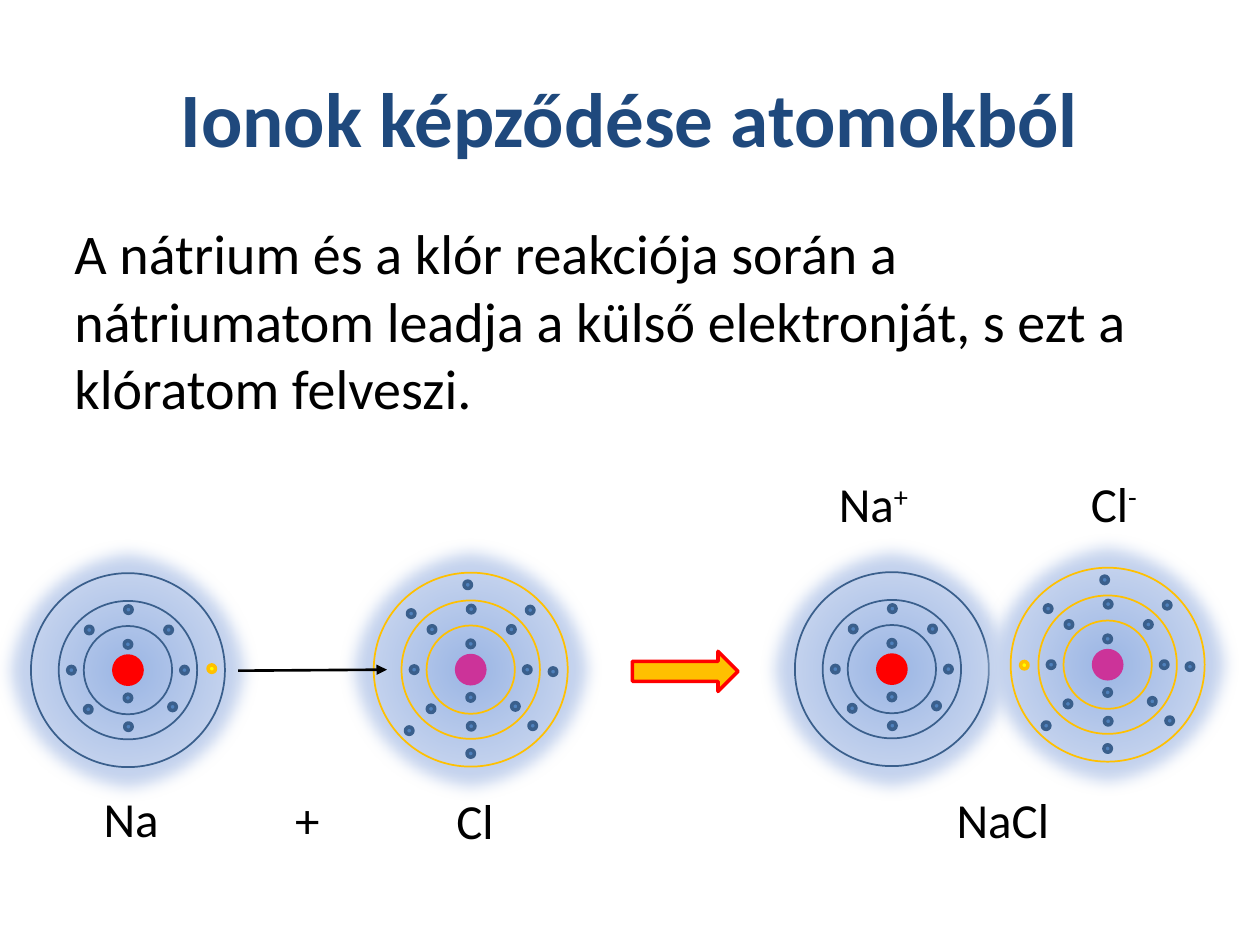
import pptx
import pptx.dml.color
import pptx.enum.shapes
import pptx.enum.text
import pptx.oxml
import pptx.oxml.ns
import pptx.util
from lxml import etree

Cm, Pt = pptx.util.Cm, pptx.util.Pt
SHAPE = pptx.enum.shapes.MSO_SHAPE
ALIGN = pptx.enum.text.PP_ALIGN
qn = pptx.oxml.ns.qn
NS = pptx.oxml.ns.nsdecls("a")

COLORS = {
    "title": "1F497D", "text": "000000", "blue": "4F81BD", "dark_blue": "3A5F8C",
    "red": "FF0000", "magenta": "CC3399", "yellow": "FFFF00", "gold": "FFC000",
    "halo_in": "9AB5E4", "halo_mid": "C2D1ED", "halo_out": "E1E8F5",
}
FONT = "Calibri"
HALO, NUCLEUS, ELECTRON = 5.36, 0.64, 0.15
RINGS = (1.78, 2.79, 3.91)
CORE = [
    (0, -0.52), (0, 0.56),
    (1.14, 0), (-1.14, 0), (0.01, -1.22), (0.01, 1.14),
    (0.82, -0.81), (-0.8, 0.79), (-0.78, -0.81), (0.9, 0.74),
]
CHLORINE_OUTER = [
    (-0.06, -1.71), (1.2, -1.2), (0, 1.69), (1.66, 0.04),
    (-1.24, 1.23), (-1.2, -1.13), (1.25, 1.13),
]


def rgb(name):
    return pptx.dml.color.RGBColor.from_string(COLORS[name])


def style_font(p, size, color="text", bold=False):
    p.font.name = FONT
    p.font.size = Pt(size)
    p.font.bold = bold
    p.font.color.rgb = rgb(color)


def style_shape(sp, fill=None, line=None, width=1):
    sp.shadow.inherit = False
    if fill:
        sp.fill.solid()
        sp.fill.fore_color.rgb = rgb(fill)
    else:
        sp.fill.background()
    if line:
        sp.line.color.rgb = rgb(line)
        sp.line.width = Pt(width)
    else:
        sp.line.fill.background()


def add_circle(shapes, x, y, d, fill=None, line=None, width=1):
    sp = shapes.add_shape(SHAPE.OVAL, Cm(x - d / 2), Cm(y - d / 2), Cm(d), Cm(d))
    style_shape(sp, fill, line, width)
    return sp


def add_halo(shapes, x, y):
    sp = add_circle(shapes, x, y, HALO)
    stops = "".join(
        f'<a:gs pos="{pos}"><a:srgbClr val="{COLORS[name]}"/></a:gs>'
        for pos, name in ((0, "halo_in"), (50000, "halo_mid"), (100000, "halo_out")))
    gradient = pptx.oxml.parse_xml(
        f'<a:gradFill {NS} rotWithShape="1"><a:gsLst>{stops}</a:gsLst>'
        '<a:path path="circle"><a:fillToRect l="50000" t="50000" r="50000" b="50000"/>'
        '</a:path></a:gradFill>')
    spPr = sp._element.spPr
    spPr.replace(spPr.find(qn("a:noFill")), gradient)
    etree.SubElement(spPr.find(qn("a:effectLst")), qn("a:softEdge"), rad="112500")


def add_atom(shapes, x, y, nucleus, ring, electrons, valence=None):
    add_halo(shapes, x, y)
    add_circle(shapes, x, y, NUCLEUS, nucleus)
    for d in RINGS:
        add_circle(shapes, x, y, d, line=ring)
    for dx, dy in electrons:
        add_circle(shapes, x + dx, y + dy, ELECTRON, "blue", "dark_blue", 2)
    if valence:
        dx, dy = valence
        add_circle(shapes, x + dx, y + dy, ELECTRON, "yellow", "gold", 2)


def add_sodium(shapes, x, y, valence=None):
    add_atom(shapes, x, y, "red", "dark_blue", CORE, valence)


def add_chlorine(shapes, x, y, valence=None):
    add_atom(shapes, x, y, "magenta", "gold", CORE + CHLORINE_OUTER, valence)


def add_text(s, x, y, w, h, text, size=28, align=ALIGN.CENTER):
    tf = s.shapes.add_textbox(Cm(x), Cm(y), Cm(w), Cm(h)).text_frame
    tf.word_wrap = True
    p = tf.paragraphs[0]
    p.alignment = align
    style_font(p, size)
    if text:
        p.add_run().text = text
    return p


def add_ion_labels(s):
    p = add_text(s, 16.66, 9.42, 6.81, 1.45, "", align=ALIGN.LEFT)
    tabs = pptx.oxml.parse_xml(
        f'<a:tabLst {NS}><a:tab pos="{Cm(5.08)}" algn="l"/></a:tabLst>')
    p._p.pPr.find(qn("a:defRPr")).addprevious(tabs)
    for text, raised in (("Na", False), ("+", True), ("\tCl", False), ("-", True)):
        r = p.add_run()
        r.text = text
        if raised:
            r.font._element.set("baseline", "30000")


def add_electron_arrow(s):
    line = s.shapes.add_connector(
        pptx.enum.shapes.MSO_CONNECTOR.STRAIGHT, Cm(4.8), Cm(13.52), Cm(7.8), Cm(13.5))
    line.line.color.rgb = rgb("text")
    line.line.width = Pt(1.5)
    etree.SubElement(line.line._get_or_add_ln(), qn("a:tailEnd"), type="triangle")
    etree.SubElement(line._element.spPr, qn("a:effectLst"))


def add_title(s, text):
    sp = s.shapes.title
    sp.left, sp.top, sp.width, sp.height = Cm(1.27), Cm(0.76), Cm(22.86), Cm(3.18)
    tf = sp.text_frame
    tf.text = text
    tf.vertical_anchor = pptx.enum.text.MSO_ANCHOR.MIDDLE
    p = tf.paragraphs[0]
    p.alignment = ALIGN.CENTER
    style_font(p, 44, "title", True)


def main():
    prs = pptx.Presentation()
    prs.slide_width, prs.slide_height = Cm(25.4), Cm(19.05)
    s = prs.slides.add_slide(prs.slide_layouts[5])
    add_title(s, "Ionok képződése atomokból")
    p = add_text(s, 1.25, 4.29, 22.86, 4.6,
                 "A nátrium és a klór reakciója során a nátriumatom leadja "
                 "a külső elektronját, s ezt a klóratom felveszi.", 32, ALIGN.LEFT)
    p.space_before, p.space_after = Pt(6.4), Pt(12)

    add_sodium(s.shapes.add_group_shape().shapes, 2.58, 13.51, (1.69, -0.03))
    add_chlorine(s.shapes.add_group_shape().shapes, 9.49, 13.5)
    add_electron_arrow(s)
    compound = s.shapes.add_group_shape().shapes
    add_sodium(compound, 17.98, 13.49)
    add_chlorine(compound, 22.33, 13.4, (-1.68, 0.01))
    arrow = s.shapes.add_shape(
        SHAPE.RIGHT_ARROW, Cm(12.75), Cm(13.13), Cm(2.13), Cm(0.81))
    style_shape(arrow, "gold", "red", 2)

    for text, x, y, w in (("Na", -0.76, 15.77, 6.81), ("+", 2.79, 15.8, 6.81),
                          ("Cl", 6.91, 15.82, 5.33), ("NaCl", 16.81, 15.8, 6.81)):
        add_text(s, x, y, w, 1.45, text)
    add_ion_labels(s)
    prs.save("out.pptx")


if __name__ == "__main__":
    main()
